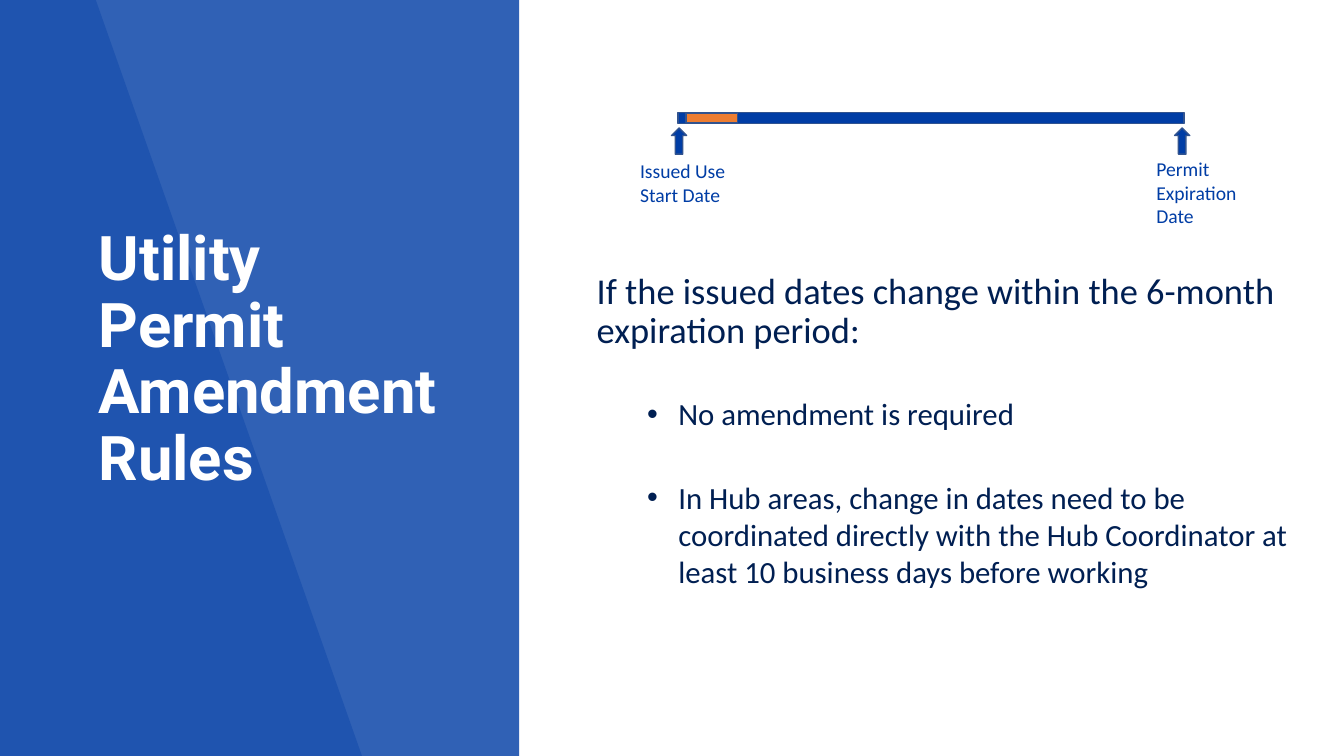
from lxml import etree
from pptx import Presentation
from pptx.dml.color import RGBColor
from pptx.enum.shapes import MSO_SHAPE
from pptx.enum.text import MSO_ANCHOR, PP_ALIGN
from pptx.oxml.ns import qn
from pptx.util import Inches, Pt

RECT, MINUS, ARROW = MSO_SHAPE.RECTANGLE, MSO_SHAPE.MATH_MINUS, MSO_SHAPE.UP_ARROW
MIDDLE, LEFT = MSO_ANCHOR.MIDDLE, PP_ALIGN.LEFT
COLORS = {"blue": "003DA5", "orange": "ED7D31", "edge": "31538F",
          "navy": "001F52", "white": "FFFFFF"}


def paint(shape, color, alpha=None, edge=False):
    shape.shadow.inherit = False
    shape.fill.solid()
    shape.fill.fore_color.rgb = RGBColor.from_string(COLORS[color])
    if alpha:
        tint = shape.fill._xPr.find(qn("a:solidFill"))[0]
        etree.SubElement(tint, qn("a:alpha"), val=str(alpha * 1000))
    if edge:
        shape.line.color.rgb = RGBColor.from_string(COLORS["edge"])
        shape.line.width = Pt(1)
    else:
        shape.line.fill.background()


def style(para, size, color, face="Calibri", bold=False):
    para.alignment = LEFT
    for run in para.runs:
        run.font.size = Pt(size)
        run.font.name = face
        run.font.bold = bold
        run.font.color.rgb = RGBColor.from_string(COLORS[color])


deck = Presentation()
deck.slide_width, deck.slide_height = Inches(13.33), Inches(7.5)
slide = deck.slides.add_slide(deck.slide_layouts[5])
shapes = slide.shapes

# Left panel with a darker slanted wedge
panel = shapes.add_shape(RECT, 0, 0, Inches(5.15), Inches(7.5))
paint(panel, "blue", alpha=81)
pen = shapes.build_freeform(0, 0)
pen.add_line_segments([(Inches(x), Inches(y))
                       for x, y in [(0.95, 0), (3.59, 7.5), (0, 7.5)]])
wedge = pen.convert_to_shape()
paint(wedge, "blue", alpha=35)

# Title, brought in front of the panel
title = shapes.title
shapes._spTree.append(title._element)
title.left, title.top = Inches(0.88), Inches(0.7)
title.width, title.height = Inches(3.59), Inches(5.75)
title.text_frame.text = "Utility Permit Amendment Rules"
title.text_frame.word_wrap = True
title.text_frame.vertical_anchor = MIDDLE
head = title.text_frame.paragraphs[0]
head.line_spacing = 0.9
style(head, 44, "white", "Roboto", True)

# Timeline: bars, then date markers
marks = [
    (MINUS, 5.82, 0.94, 6.83, 0.46, "blue"),
    (MINUS, 6.71, 0.98, 0.7, 0.38, "orange"),
    (ARROW, 6.66, 1.27, 0.15, 0.26, "blue"),
    (ARROW, 11.65, 1.27, 0.15, 0.26, "blue"),
]
for kind, x, y, w, h, color in marks:
    mark = shapes.add_shape(kind, Inches(x), Inches(y), Inches(w), Inches(h))
    paint(mark, color, edge=True)

labels = [
    ("Issued Use Start Date", 6.25, 1.53, 1.24, 0.57),
    ("Permit Expiration Date", 11.37, 1.51, 1.14, 0.81),
]
for text, x, y, w, h in labels:
    label = shapes.add_textbox(Inches(x), Inches(y), Inches(w), Inches(h))
    label.text_frame.word_wrap = True
    label.text_frame.text = text
    style(label.text_frame.paragraphs[0], 14, "blue")

# Rule text: text, size, line spacing, space after, bullet
rules = [
    ("If the issued dates change within the 6-month expiration period:",
     26, 0.9, 34, False),
    ("No amendment is required", 22, 0.9, 33, True),
    ("In Hub areas, change in dates need to be coordinated directly with "
     "the Hub Coordinator at least 10 business days before working",
     22, 1, 0, True),
]
body = shapes.add_textbox(Inches(5.82), Inches(2.66), Inches(7.05), Inches(4.07))
frame = body.text_frame
frame.word_wrap = True
for i, (text, size, lead, after, bullet) in enumerate(rules):
    para = frame.add_paragraph() if i else frame.paragraphs[0]
    para.text = text
    para.line_spacing = lead
    para.space_after = Pt(after)
    if bullet:
        para.level = 1
        props = para._p.get_or_add_pPr()
        props.set("marL", str(Inches(0.81)))
        props.set("indent", str(Inches(-0.31)))
        etree.SubElement(props, qn("a:buFont"), typeface="Arial")
        etree.SubElement(props, qn("a:buChar"), char="•")
    style(para, size, "navy")

deck.save("out.pptx")
